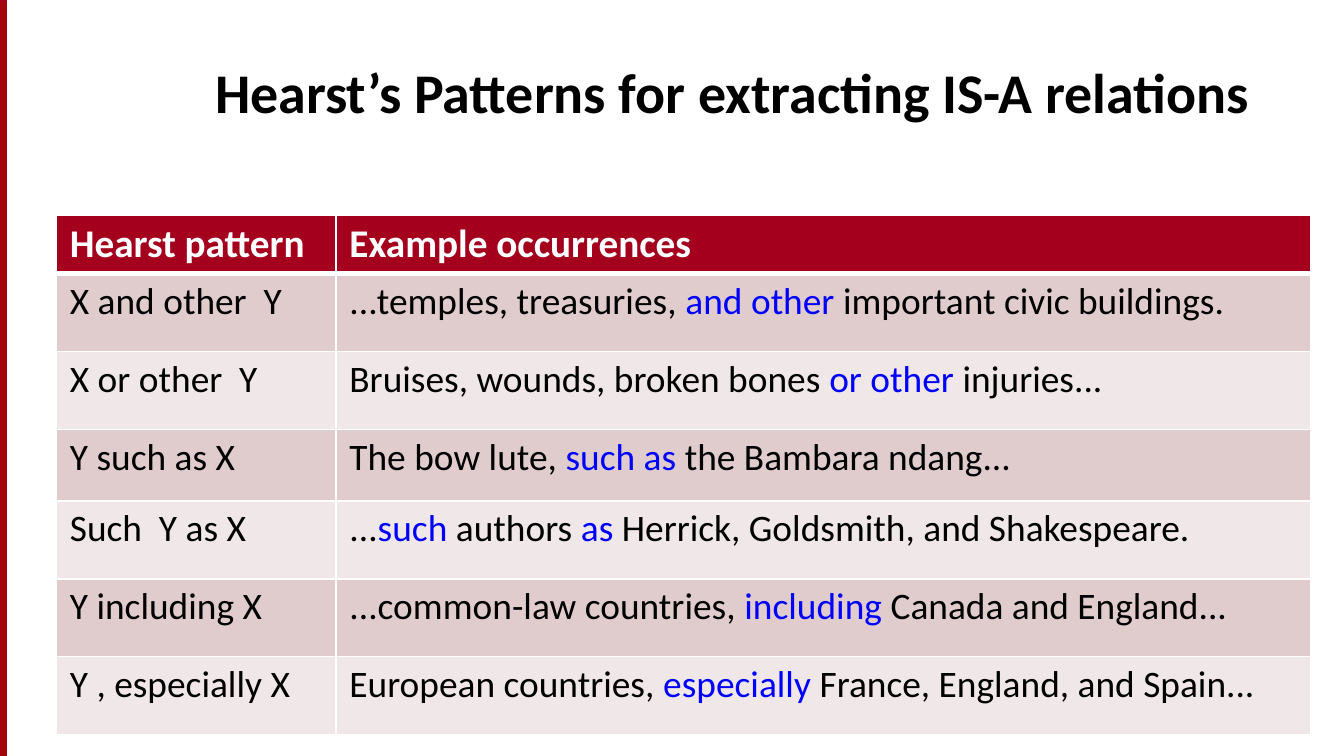
from lxml.etree import SubElement
from pptx import Presentation
from pptx.dml.color import RGBColor
from pptx.enum.shapes import MSO_SHAPE
from pptx.enum.text import MSO_ANCHOR, PP_ALIGN
from pptx.oxml.ns import qn
from pptx.util import Inches, Pt

FONT = "Calibri"
CRIMSON, WHITE, BLACK, BLUE = "A4001D", "FFFFFF", "000000", "0000FF"
BANDS = ("E0CCCD", "F0E7E8")
HEADINGS = ("Hearst pattern", "Example occurrences")
COLUMN_WIDTHS = (2.08, 7.25)
ROW_HEIGHTS = (0.4, 0.58, 0.58, 0.53, 0.58, 0.58, 0.58)
PATTERNS = (
    ("X and other  Y", ("...temples, treasuries, ", "and other ", "important civic buildings.")),
    ("X or other  Y", ("Bruises, wounds, broken bones ", "or other ", "injuries...")),
    ("Y such as X", ("The bow lute, ", "such as ", "the Bambara ndang...")),
    ("Such  Y as X", ("...", "such", " authors ", "as", " Herrick, Goldsmith, and Shakespeare.")),
    ("Y including X", ("...common-law countries, ", "including", " Canada and England...")),
    ("Y , especially X", ("European countries, ", "especially", " France, England, and Spain...")),
)


def rgb(value):
    """Turn a hex string into a colour."""
    return RGBColor.from_string(value)


def style_run(run, size, color, bold=False):
    """Set the font of a run."""
    run.font.name = FONT
    run.font.size = Pt(size)
    run.font.bold = bold
    run.font.color.rgb = rgb(color)


def set_borders(cell, bottom):
    """Draw white borders round a cell, with its own bottom width in points."""
    properties = cell._tc.get_or_add_tcPr()
    for index, (side, width) in enumerate((("L", 1), ("R", 1), ("T", 1), ("B", bottom))):
        border = properties.makeelement(qn(f"a:ln{side}"), {"w": str(Pt(width))})
        fill = SubElement(border, qn("a:solidFill"))
        SubElement(fill, qn("a:srgbClr"), val=WHITE)
        properties.insert(index, border)


def fill_cell(cell, parts, size, colors, background, bold=False, bottom=1):
    """Write text parts in alternating colours into a filled, bordered cell."""
    cell.margin_left = cell.margin_right = Inches(0.1)
    cell.margin_top = cell.margin_bottom = Inches(0.04)
    cell.fill.solid()
    cell.fill.fore_color.rgb = rgb(background)
    set_borders(cell, bottom)
    for index, part in enumerate(parts):
        run = cell.text_frame.paragraphs[0].add_run()
        run.text = part
        style_run(run, size, colors[index % 2], bold)


def add_side_bar(slide, left, top, width, height):
    """Draw the crimson bar along the slide's edge."""
    bar = slide.shapes.add_shape(
        MSO_SHAPE.RECTANGLE, Inches(left), Inches(top), Inches(width), Inches(height))
    bar.shadow.inherit = False
    bar.fill.solid()
    bar.fill.fore_color.rgb = rgb("A40508")
    bar.line.color.rgb = rgb(CRIMSON)
    bar.line.width = Pt(0.75)


def place_title(slide, left, top, width, height):
    """Place and format the title."""
    title = slide.shapes.title
    title.left, title.top = Inches(left), Inches(top)
    title.width, title.height = Inches(width), Inches(height)
    title.text_frame.text = "Hearst’s Patterns for extracting IS-A relations"
    title.text_frame.vertical_anchor = MSO_ANCHOR.BOTTOM
    heading = title.text_frame.paragraphs[0]
    heading.alignment = PP_ALIGN.LEFT
    style_run(heading.runs[0], 30, BLACK, True)


def add_pattern_table(slide, left, top):
    """Build the table of patterns and their example occurrences."""
    table = slide.shapes.add_table(
        len(ROW_HEIGHTS), len(COLUMN_WIDTHS), Inches(left), Inches(top),
        Inches(sum(COLUMN_WIDTHS)), Inches(sum(ROW_HEIGHTS))).table
    for column, width in zip(table.columns, COLUMN_WIDTHS):
        column.width = Inches(width)
    for row, height in zip(table.rows, ROW_HEIGHTS):
        row.height = Inches(height)
    for column, heading in enumerate(HEADINGS):
        fill_cell(table.cell(0, column), [heading], 21, (WHITE, WHITE), CRIMSON, True, 3)
    for row, (pattern, example) in enumerate(PATTERNS, 1):
        band = BANDS[(row - 1) % 2]
        fill_cell(table.cell(row, 0), [pattern], 20, (BLACK, BLUE), band)
        fill_cell(table.cell(row, 1), example, 20, (BLACK, BLUE), band)


def main():
    """Build and save the slide."""
    presentation = Presentation()
    presentation.slide_width = Inches(10)
    presentation.slide_height = Inches(10 * 9 / 16)
    slide = presentation.slides.add_slide(presentation.slide_layouts[5])
    add_side_bar(slide, 0, 0, 0.05, 5.63)
    place_title(slide, 1.5, 0.23, 8.42, 0.75)
    add_pattern_table(slide, 0.42, 1.6)
    presentation.save("out.pptx")


if __name__ == "__main__":
    main()
